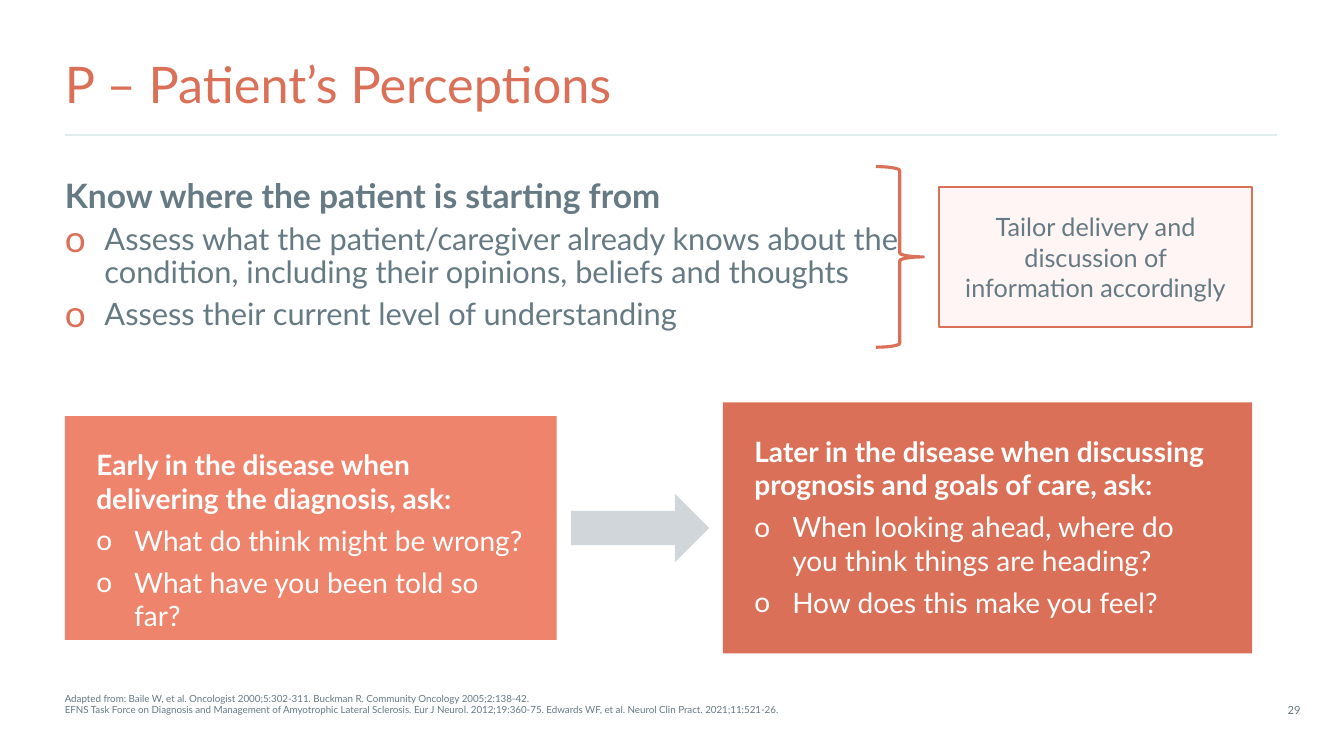
from dataclasses import dataclass
from lxml.etree import SubElement
from pptx import Presentation
from pptx.dml.color import RGBColor
from pptx.enum.shapes import MSO_CONNECTOR, MSO_SHAPE
from pptx.enum.text import MSO_ANCHOR, PP_ALIGN
from pptx.oxml.ns import qn
from pptx.util import Pt


@dataclass(frozen=True)
class Theme:
    font: str = "Lato"
    ink: str = "667A84"
    coral: str = "DB7059"
    light: str = "EF846D"
    blush: str = "FFF5F5"
    white: str = "FFFFFF"
    rule: str = "E0EDED"
    title: int = 36
    head: int = 24
    body: int = 22
    card: int = 20
    note: int = 18
    page: int = 8
    foot: int = 7


class Deck:
    def __init__(self, theme):
        self.theme = theme
        self.file = Presentation()
        self.file.slide_width, self.file.slide_height = Pt(960), Pt(540)
        self.slide = self.file.slides.add_slide(self.file.slide_layouts[6])

    def frame(self, item, inset=(0, 0), anchor=MSO_ANCHOR.TOP, wrap=True):
        frame = item.text_frame
        frame.word_wrap = wrap
        frame.vertical_anchor = anchor
        frame.margin_left = frame.margin_right = Pt(inset[0])
        frame.margin_top = frame.margin_bottom = Pt(inset[1])
        return frame

    def box(self, area, **style):
        return self.frame(self.slide.shapes.add_textbox(*map(Pt, area)), **style)

    def shape(self, kind, area, fill=None, line=None, width=1.5, alpha=None):
        item = self.slide.shapes.add_shape(kind, *map(Pt, area))
        item.shadow.inherit = False
        if fill:
            item.fill.solid()
            item.fill.fore_color.rgb = RGBColor.from_string(fill)
        else:
            item.fill.background()
        if line:
            item.line.color.rgb = RGBColor.from_string(line)
            item.line.width = Pt(width)
        else:
            item.line.fill.background()
        if alpha:
            tint = item.fill._xPr.find(qn("a:solidFill"))[0]
            SubElement(tint, qn("a:alpha"), val=str(alpha * 1000))
        return item

    def line(self, start, end, color, width):
        item = self.slide.shapes.add_connector(MSO_CONNECTOR.STRAIGHT, *map(Pt, start + end))
        item.line.color.rgb = RGBColor.from_string(color)
        item.line.width = Pt(width)
        SubElement(item._element.spPr, qn("a:effectLst"))

    def text(self, frame, words, size, color, bold=False, align=PP_ALIGN.LEFT, space=None):
        first = not frame.text
        para = frame.paragraphs[0] if first else frame.add_paragraph()
        para.text = words
        para.alignment = align
        if space:
            para.line_spacing = space
        para.font.name = self.theme.font
        para.font.size = Pt(size)
        para.font.bold = bold
        para.font.color.rgb = RGBColor.from_string(color)

    def bullet(self, frame, words, size, color, indent, mark, scale=100, space=None):
        para = frame.add_paragraph()
        para.text = words
        para.alignment = PP_ALIGN.LEFT
        para.space_before = Pt(6)
        if space:
            para.line_spacing = space
        props = para._p.get_or_add_pPr()
        props.set("marL", str(Pt(indent)))
        props.set("indent", str(-Pt(indent)))
        tint = SubElement(props, qn("a:buClr"))
        SubElement(tint, qn("a:srgbClr"), val=mark)
        SubElement(props, qn("a:buSzPct"), val=str(scale * 1000))
        SubElement(props, qn("a:buFont"), typeface=self.theme.font)
        SubElement(props, qn("a:buChar"), char="o")
        para.font.name = self.theme.font
        para.font.size = Pt(size)
        para.font.bold = False
        para.font.color.rgb = RGBColor.from_string(color)

    def card(self, area, fill, head, asks):
        theme = self.theme
        frame = self.frame(self.shape(MSO_SHAPE.RECTANGLE, area, fill), inset=(22.5, 22.5))
        self.text(frame, head, theme.card, theme.white, bold=True)
        for ask in asks:
            self.bullet(frame, ask, theme.card, theme.white, 27, theme.white)


def main():
    theme = Theme()
    deck = Deck(theme)
    left = 46.3

    title = deck.box((left, 42.5, 866, 39.5), anchor=MSO_ANCHOR.MIDDLE)
    deck.text(title, "P – Patient’s Perceptions", theme.title, theme.coral, space=0.9)
    deck.line((left, 96.5), (912.3, 96.5), theme.rule, 1.5)

    body = deck.box((left, 128, 635, 110))
    deck.text(body, "Know where the patient is starting from", theme.head, theme.ink,
              bold=True, space=0.9)
    for point in (
        "Assess what the patient/caregiver already knows about the condition, "
        "including their opinions, beliefs and thoughts",
        "Assess their current level of understanding",
    ):
        deck.bullet(body, point, theme.body, theme.ink, 28.35, theme.coral, 120, 0.9)

    foot = deck.box((left, 496, 801, 15.2), anchor=MSO_ANCHOR.BOTTOM)
    for source in (
        "Adapted from: Baile W, et al. Oncologist 2000;5:302-311. "
        "Buckman R. Community Oncology 2005;2:138-42.",
        "EFNS Task Force on Diagnosis and Management of Amyotrophic Lateral Sclerosis. "
        "Eur J Neurol. 2012;19:360-75. Edwards WF, et al. Neurol Clin Pract. 2021;11:521-26.",
    ):
        deck.text(foot, source, theme.foot, theme.ink, space=0.9)

    deck.card((left, 297.2, 351.4, 159.8), theme.light,
              "Early in the disease when delivering the diagnosis, ask:",
              ("What do think might be wrong?", "What have you been told so far?"))
    deck.card((516.4, 287.5, 378, 179.3), theme.coral,
              "Later in the disease when discussing prognosis and goals of care, ask:",
              ("When looking ahead, where do\vyou think things are heading?",
               "How does this make you feel?"))
    deck.shape(MSO_SHAPE.RIGHT_ARROW, (408, 352.6, 98.6, 49), theme.ink, alpha=30)

    note = deck.shape(MSO_SHAPE.RECTANGLE, (670.7, 133.6, 223.7, 100), theme.blush, theme.coral)
    deck.text(deck.frame(note, inset=(14.4, 17.3), anchor=MSO_ANCHOR.MIDDLE),
              "Tailor delivery and discussion of information accordingly",
              theme.note, theme.ink, align=PP_ALIGN.CENTER)
    deck.shape(MSO_SHAPE.RIGHT_BRACE, (625.7, 119, 34, 129), line=theme.coral, width=2.25)

    page = deck.box((912, 499, 25, 17), anchor=MSO_ANCHOR.MIDDLE, wrap=False)
    deck.text(page, "29", theme.page, theme.ink, align=PP_ALIGN.CENTER)

    deck.file.save("out.pptx")


if __name__ == "__main__":
    main()
